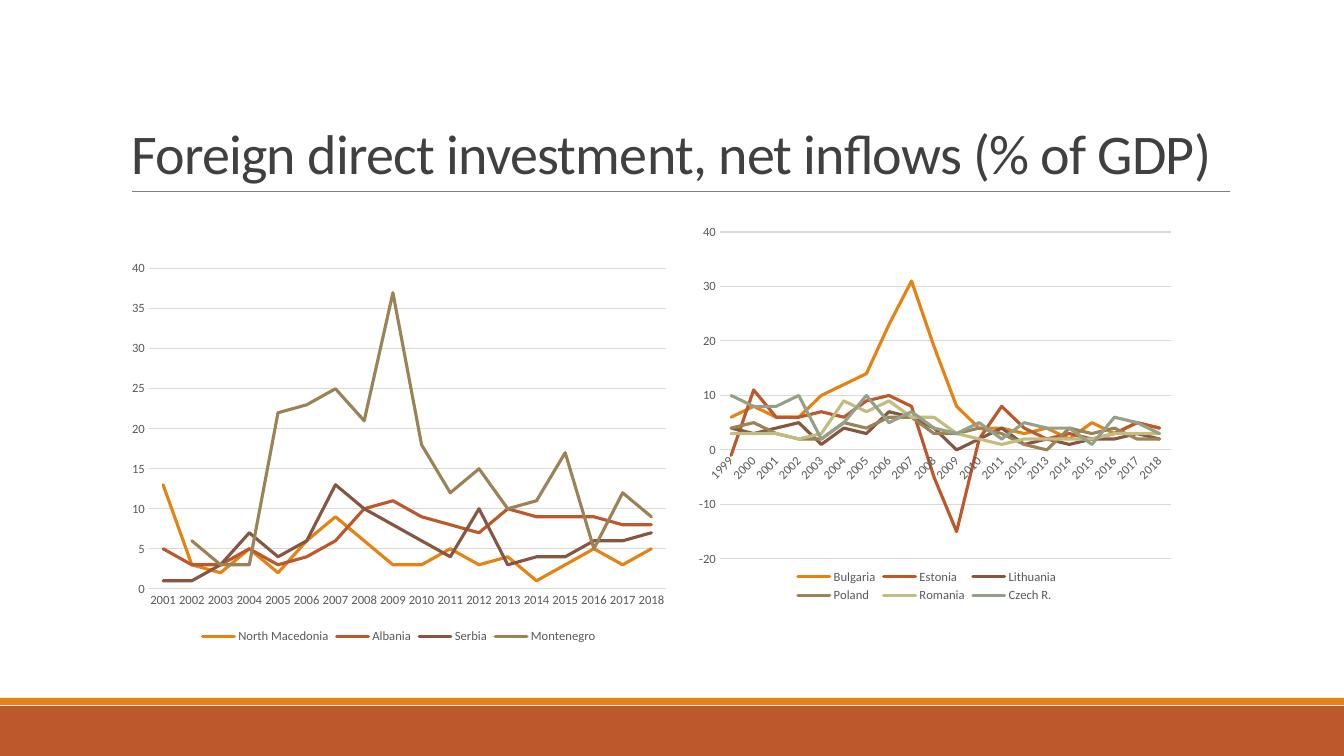
from dataclasses import dataclass

from lxml.etree import SubElement
from pptx import Presentation
from pptx.chart.data import CategoryChartData as ChartData
from pptx.dml.color import RGBColor as RGB
from pptx.enum.chart import XL_CHART_TYPE as Kind
from pptx.enum.chart import XL_LEGEND_POSITION as Spot
from pptx.enum.chart import XL_TICK_MARK as Tick
from pptx.enum.shapes import MSO_CONNECTOR as Link
from pptx.enum.shapes import MSO_SHAPE as Shape
from pptx.enum.text import MSO_ANCHOR as Anchor
from pptx.enum.text import MSO_AUTO_SIZE as Fit
from pptx.enum.text import PP_ALIGN as Align
from pptx.oxml import parse_xml
from pptx.oxml.ns import nsdecls, qn
from pptx.util import Emu, Pt

FONT = "Calibri"
COLORS = {
    "title": "404040", "rule": "808080", "label": "595959", "grid": "D9D9D9",
    "orange": "E48312", "rust": "BD582C", "brown": "865640",
    "khaki": "9B8357", "sand": "C2BC80", "sage": "94A088",
}
LINES = ["orange", "rust", "brown", "khaki", "sand", "sage"]


@dataclass
class Box:
    x: int
    y: int
    w: int
    h: int


@dataclass
class Band:
    box: Box
    color: str


@dataclass
class Plot:
    box: Box
    inner: Box
    start: int
    low: int
    high: int
    step: int
    angle: int
    rows: dict[str, list[int | None]]


BANDS = [
    Band(Box(0, 706, 1344, 50), "rust"),
    Band(Box(0, 698, 1344, 7), "orange"),
]
PLOTS = [
    Plot(Box(121, 204, 556, 444), Box(149, 269, 517, 320), 2001, 0, 40, 5, 0, {
        "North Macedonia": [13, 3, 2, 5, 2, 6, 9, 6, 3, 3, 5, 3, 4, 1, 3, 5, 3, 5],
        "Albania": [5, 3, 3, 5, 3, 4, 6, 10, 11, 9, 8, 7, 10, 9, 9, 9, 8, 8],
        "Serbia": [1, 1, 3, 7, 4, 6, 13, 10, 8, 6, 4, 10, 3, 4, 4, 6, 6, 7],
        "Montenegro": [None, 6, 3, 3, 22, 23, 25, 21, 37, 18, 12, 15, 10, 11, 17, 5, 12, 9],
    }),
    Plot(Box(675, 214, 504, 393), Box(720, 232, 451, 327), 1999, -20, 40, 10, -45, {
        "Bulgaria": [6, 8, 6, 6, 10, 12, 14, 23, 31, 19, 8, 4, 4, 3, 4, 2, 5, 3, 5, 4],
        "Estonia": [-1, 11, 6, 6, 7, 6, 9, 10, 8, -5, -15, 2, 8, 4, 2, 3, 2, 3, 5, 4],
        "Lithuania": [4, 3, 4, 5, 1, 4, 3, 7, 6, 4, 0, 2, 4, 1, 2, 1, 2, 2, 3, 2],
        "Poland": [4, 5, 3, 2, 2, 5, 4, 6, 6, 3, 3, 4, 3, 1, 0, 4, 3, 4, 2, 2],
        "Romania": [3, 3, 3, 2, 3, 9, 7, 9, 6, 6, 3, 2, 1, 2, 2, 2, 2, 3, 3, 3],
        "Czech R.": [10, 8, 8, 10, 2, 5, 10, 5, 7, 4, 3, 5, 2, 5, 4, 4, 1, 6, 5, 3],
    }),
]


def px(n: int) -> Emu:
    return Emu(round(n * 914400 / 100.8))


def frame(box: Box) -> tuple[Emu, ...]:
    return px(box.x), px(box.y), px(box.w), px(box.h)


def paint(line, color: str, width: float) -> None:
    line.color.rgb = RGB.from_string(COLORS[color])
    line.width = Pt(width)


def style(font, size: int, color: str) -> None:
    font.name, font.size = FONT, Pt(size)
    font.color.rgb = RGB.from_string(COLORS[color])


def add_band(slide, band: Band) -> None:
    bar = slide.shapes.add_shape(Shape.RECTANGLE, *frame(band.box))
    bar.shadow.inherit = False
    bar.fill.solid()
    bar.fill.fore_color.rgb = RGB.from_string(COLORS[band.color])
    bar.line.fill.background()


def add_rule(slide) -> None:
    rule = slide.shapes.add_connector(Link.STRAIGHT, px(132), px(191), px(1230), px(191))
    paint(rule.line, "rule", 0.5)
    SubElement(rule._element.spPr, qn("a:effectLst"))


def set_title(slide, text: str) -> None:
    title = slide.shapes.title
    title.left, title.top, title.width, title.height = frame(Box(121, 31, 1109, 160))
    body = title.text_frame
    body.text = text
    body.word_wrap, body.auto_size = True, Fit.NONE
    body.vertical_anchor = Anchor.BOTTOM
    para = body.paragraphs[0]
    para.alignment, para.line_spacing = Align.LEFT, 0.85
    run = para.runs[0]
    style(run.font, 40, "title")
    run.font._element.set("spc", "-50")


def place_plot(chart, plot: Plot) -> None:
    """Fix the inner plot area as shares of the chart frame."""
    box, inner = plot.box, plot.inner
    parts = {
        "x": (inner.x - box.x) / box.w, "y": (inner.y - box.y) / box.h,
        "w": inner.w / box.w, "h": inner.h / box.h,
    }
    modes = "".join(f'<c:{k}Mode val="edge"/>' for k in "xy")
    sizes = "".join(f'<c:{k} val="{v:.3f}"/>' for k, v in parts.items())
    area = chart._chartSpace.chart.plotArea
    for old in area.findall(qn("c:layout")):
        area.remove(old)
    area.insert(0, parse_xml(
        f'<c:layout {nsdecls("c")}><c:manualLayout><c:layoutTarget val="inner"/>'
        f"{modes}{sizes}</c:manualLayout></c:layout>"))


def set_axes(chart, plot: Plot) -> None:
    years, scale = chart.category_axis, chart.value_axis
    for axis in (years, scale):
        axis.major_tick_mark = axis.minor_tick_mark = Tick.NONE
        style(axis.tick_labels.font, 9, "label")
    years.has_major_gridlines = False
    paint(years.format.line, "grid", 0.75)
    turn = years._element.find(qn("c:txPr")).find(qn("a:bodyPr"))
    turn.set("rot", str(plot.angle * 60000))
    scale.minimum_scale, scale.maximum_scale = plot.low, plot.high
    scale.major_unit = plot.step
    scale.tick_labels.number_format = "0"
    scale.tick_labels.number_format_is_linked = False
    scale.format.line.fill.background()
    scale.has_major_gridlines = True
    paint(scale.major_gridlines.format.line, "grid", 0.75)


def add_plot(slide, plot: Plot) -> None:
    data = ChartData()
    count = len(next(iter(plot.rows.values())))
    data.categories = [str(plot.start + i) for i in range(count)]
    for name, vals in plot.rows.items():
        data.add_series(name, vals)
    chart = slide.shapes.add_chart(Kind.LINE, *frame(plot.box), data).chart
    style(chart.font, 10, "label")
    chart.has_title = False
    chart.has_legend = True
    chart.legend.position = Spot.BOTTOM
    chart.legend.include_in_layout = False
    style(chart.legend.font, 9, "label")
    chart.plots[0].vary_by_categories = False
    for row, color in zip(chart.plots[0].series, LINES):
        row.smooth = False
        paint(row.format.line, color, 2.25)
        row.format.line._get_or_add_ln().set("cap", "rnd")
    set_axes(chart, plot)
    place_plot(chart, plot)


def main() -> None:
    deck = Presentation()
    deck.slide_width, deck.slide_height = px(1344), px(756)
    slide = deck.slides.add_slide(deck.slide_layouts.get_by_name("Title Only"))
    for band in BANDS:
        add_band(slide, band)
    add_rule(slide)
    set_title(slide, "Foreign direct investment, net inflows (% of GDP)")
    for plot in PLOTS:
        add_plot(slide, plot)
    deck.save("out.pptx")


if __name__ == "__main__":
    main()
